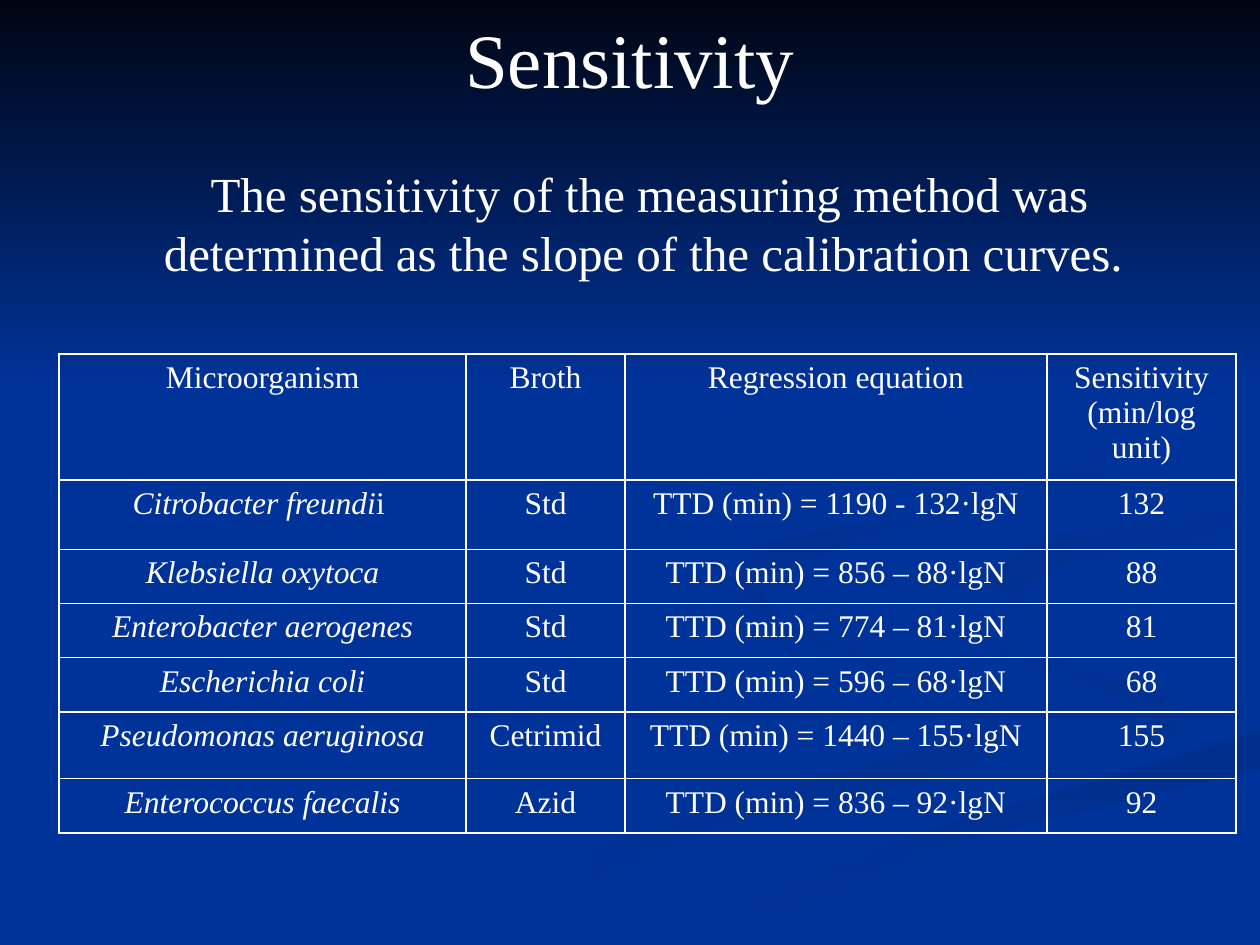
import pptx
import pptx.dml.color
import pptx.enum.shapes
import pptx.enum.text
import pptx.oxml
import pptx.oxml.ns
import pptx.util

WHITE = pptx.dml.color.RGBColor(0xFF, 0xFF, 0xFF)
BLUE = pptx.dml.color.RGBColor(0x00, 0x33, 0x99)
NIGHT = pptx.dml.color.RGBColor(0x00, 0x05, 0x14)
SHADE = pptx.dml.color.RGBColor(0x00, 0x31, 0x93)
DEEP_SHADE = pptx.dml.color.RGBColor(0x00, 0x2F, 0x8D)
FONT = "Times New Roman"
ANCHOR = pptx.enum.text.MSO_ANCHOR

deck = pptx.Presentation()
deck.slide_width = pptx.util.Inches(10)
deck.slide_height = pptx.util.Inches(7.5)
UNIT = deck.slide_width / 100  # square grid of 100 columns by 75 rows
page = deck.slides.add_slide(deck.slide_layouts[6])
page.background.fill.solid()
page.background.fill.fore_color.rgb = BLUE


def grid(*counts):
    """Turn counts of grid units into lengths."""
    return [pptx.util.Emu(round(count * UNIT)) for count in counts]


def write(frame, text, size=18, anchor=ANCHOR.TOP, italic_length=0):
    """Write centred lines; the first italic_length letters of each are italic."""
    frame.word_wrap = True
    for index, line in enumerate(text.split("\n")):
        para = frame.paragraphs[0] if index == 0 else frame.add_paragraph()
        para.alignment = pptx.enum.text.PP_ALIGN.CENTER
        for part, italic in ((line[:italic_length], True), (line[italic_length:], False)):
            if part:
                span = para.add_run()
                span.text = part
                span.font.name = FONT
                span.font.size = pptx.util.Pt(size)
                span.font.italic = italic
                span.font.color.rgb = WHITE
    frame.vertical_anchor = anchor


# Background ribbons: start colour, end colour, clockwise angle, outline in grid units
ribbons = [
    (BLUE, SHADE, 0, [(57, 46), (61, 50), (77, 55), (78, 58), (50, 66), (30, 75),
                      (36, 75), (56, 66), (77, 61), (80, 58), (77, 55), (61, 49)]),
    (BLUE, SHADE, 45, [(72, 46), (77, 51), (90, 56), (92, 58), (89, 60),
                       (94, 58), (93, 55), (77, 50)]),
    (DEEP_SHADE, BLUE, 90, [(50, 75), (57, 75), (75, 67), (100, 61), (100, 58), (70, 67)]),
    (BLUE, BLUE, 0, [(72, 46), (76, 50), (93, 55), (94, 58), (66, 67), (48, 75),
                     (52, 75), (70, 67), (100, 58), (100, 54), (82, 49), (78, 46),
                     (84, 43), (100, 40), (100, 39), (77, 43)]),
    (SHADE, BLUE, 45, [(78, 46), (83, 50), (81, 47), (84, 45), (100, 42), (100, 40), (82, 43)]),
    (DEEP_SHADE, BLUE, 45, [(76, 23), (86, 28), (89, 34), (82, 39), (61, 43), (58, 46),
                            (62, 50), (60, 46), (68, 43), (87, 38), (89, 33), (86, 28)]),
]
backdrop = []
for start, end, angle, outline in ribbons:
    builder = page.shapes.build_freeform(*outline[0], scale=UNIT)
    builder.add_line_segments(outline[1:], close=True)
    backdrop.append((builder.convert_to_shape(), start, end, angle))
sky = page.shapes.add_shape(pptx.enum.shapes.MSO_SHAPE.RECTANGLE, *grid(0, 0, 100, 30.8))
backdrop.append((sky, NIGHT, BLUE, 90))
for shape, start, end, angle in backdrop:
    shape.shadow.inherit = False
    shape.line.fill.background()
    shape.fill.gradient()
    shape.fill.gradient_angle = (360 - angle) % 360
    for stop, colour in zip(shape.fill.gradient_stops, (start, end)):
        stop.color.rgb = colour

title = page.shapes.add_textbox(*grid(5, 0, 90, 9.1))
write(title.text_frame, "Sensitivity", size=44, anchor=ANCHOR.MIDDLE)
summary = page.shapes.add_textbox(*grid(9.8, 12.5, 83.5, 15))
write(summary.text_frame, "The sensitivity of the measuring method was determined "
      "as the slope of the calibration curves. ", size=28)

records = [
    ("Microorganism", "Broth", "Regression equation", "Sensitivity\n(min/log unit)"),
    ("Citrobacter freundii ", "Std", "TTD (min) = 1190 - 132·lgN", "132"),
    ("Klebsiella oxytoca", "Std", "TTD (min) = 856 – 88·lgN", "88"),
    ("Enterobacter aerogenes", "Std", "TTD (min) = 774 – 81·lgN", "81"),
    ("Escherichia coli", "Std", "TTD (min) = 596 – 68·lgN", "68"),
    ("Pseudomonas aeruginosa", "Cetrimid", "TTD (min) = 1440 – 155·lgN", "155"),
    ("Enterococcus faecalis", "Azid", "TTD (min) = 836 – 92·lgN", "92"),
]
column_widths = grid(32.3, 12.6, 33.5, 15)
row_heights = grid(8.7, 5.5, 4.3, 4.3, 4.3, 5.3, 4.3)
table = page.shapes.add_table(len(records), len(column_widths), *grid(4.7, 28.1),
                              sum(column_widths), sum(row_heights)).table
table.first_row = table.horz_banding = False
for column, width in zip(table.columns, column_widths):
    column.width = width
for row, height in zip(table.rows, row_heights):
    row.height = height

BORDER = ('<a:{side} {ns} w="12700"><a:solidFill><a:srgbClr val="{colour}"/>'
          '</a:solidFill></a:{side}>')
for row_index, record in enumerate(records):
    for column_index, text in enumerate(record):
        cell = table.cell(row_index, column_index)
        italic_length = 0
        if row_index > 0 and column_index == 0:
            italic_length = len(text.removesuffix("i "))
        write(cell.text_frame, text, italic_length=italic_length)
        cell.vertical_anchor = ANCHOR.TOP
        properties = cell._tc.get_or_add_tcPr()
        for side in ("lnL", "lnR", "lnT", "lnB"):
            properties.append(pptx.oxml.parse_xml(BORDER.format(
                side=side, ns=pptx.oxml.ns.nsdecls("a"), colour=WHITE)))
        cell.fill.background()

deck.save("out.pptx")
